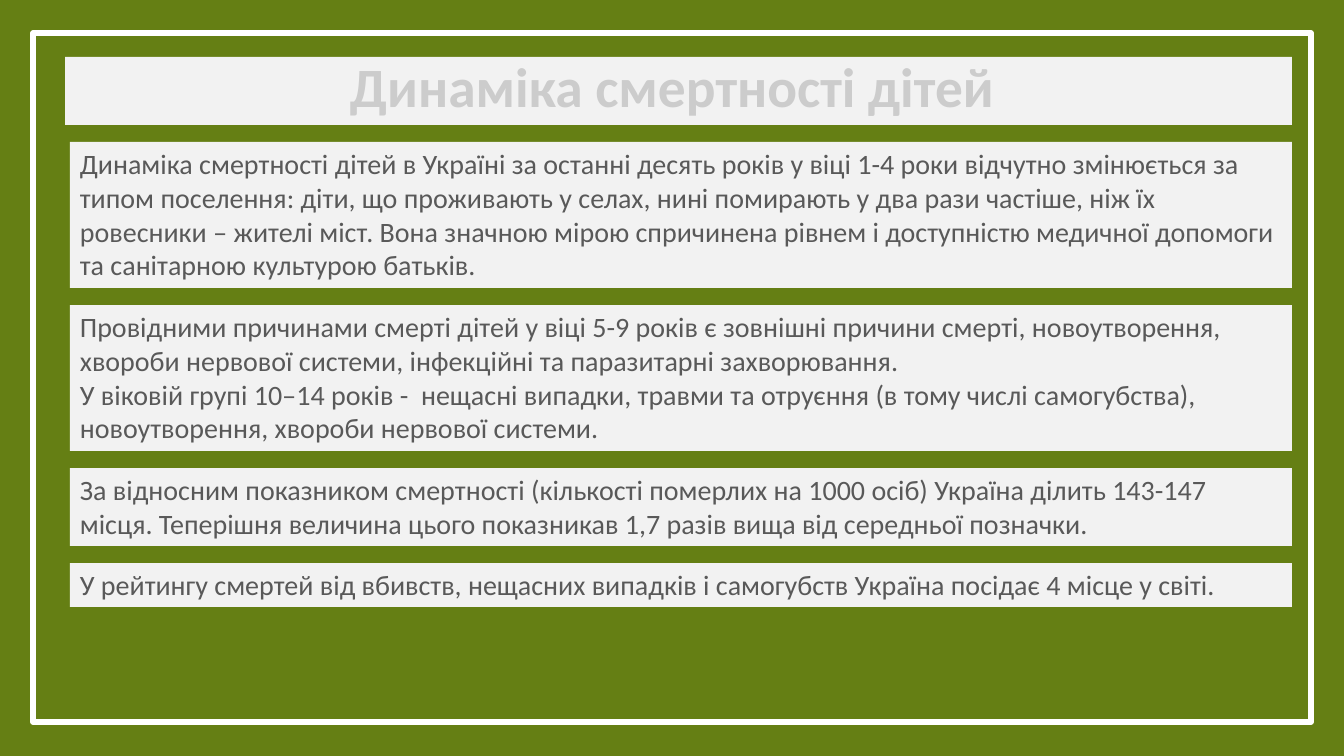
from pptx import Presentation
from pptx.dml.color import RGBColor
from pptx.enum.shapes import MSO_SHAPE
from pptx.enum.text import MSO_ANCHOR, MSO_AUTO_SIZE, PP_ALIGN
from pptx.util import Pt

EMU_PER_INCH, PX_PER_INCH = 914400, 100.8
COLORS = {
    "green": "657F14",
    "white": "FFFFFF",
    "panel": "F2F2F2",
    "title": "CCCCCC",
    "text": "595959",
}


def px(*lengths):
    return [round(length * EMU_PER_INCH / PX_PER_INCH) for length in lengths]


def add_span(para, text, size, color):
    span = para.add_run()
    span.text = text
    span.font.name = "Calibri"
    span.font.size = Pt(size)
    span.font.color.rgb = RGBColor.from_string(COLORS[color])
    return span


deck = Presentation()
deck.slide_width, deck.slide_height = px(1344, 756)
page = deck.slides.add_slide(deck.slide_layouts[5])

# Background and white frame
page.background.fill.solid()
page.background.fill.fore_color.rgb = RGBColor.from_string(COLORS["green"])
frame = page.shapes.add_shape(MSO_SHAPE.RECTANGLE, *px(33, 33, 1278, 689))
frame.shadow.inherit = False
frame.fill.background()
frame.line.color.rgb = RGBColor.from_string(COLORS["white"])
frame.line.width = Pt(4)

# Title
title = page.shapes.title
title.left, title.top, title.width, title.height = px(65, 57, 1227, 68)
title.fill.solid()
title.fill.fore_color.rgb = RGBColor.from_string(COLORS["panel"])
title.text_frame.auto_size = MSO_AUTO_SIZE.NONE
title.text_frame.vertical_anchor = MSO_ANCHOR.BOTTOM
para = title.text_frame.paragraphs[0]
para.alignment = PP_ALIGN.CENTER
para.line_spacing = 0.9
add_span(para, "Динаміка смертності дітей ", 39.6, "title").font.bold = True

# Text panels, stacked with an equal gap: height and paragraphs
panels = [
    (146, [
        "Динаміка смертності дітей в Україні за останні десять років у віці 1-4 роки "
        "відчутно змінюється за типом поселення: діти, що проживають у селах, нині "
        "помирають у два рази частіше, ніж їх ровесники ‒ жителі міст. Вона значною "
        "мірою спричинена рівнем і доступністю медичної допомоги та санітарною "
        "культурою батьків.",
    ]),
    (146, [
        "Провідними причинами смерті дітей у віці 5-9 років є зовнішні причини смерті, "
        "новоутворення, хвороби нервової системи, інфекційні та паразитарні "
        "захворювання.",
        "У віковій групі 10‒14 років -  нещасні випадки, травми та отруєння (в тому "
        "числі самогубства), новоутворення, хвороби нервової системи.",
    ]),
    (78, [
        "За відносним показником смертності (кількості померлих на 1000 осіб) Україна "
        "ділить 143-147 місця. Теперішня величина цього показникав 1,7 разів вища від "
        "середньої позначки.",
    ]),
    (44, [
        "У рейтингу смертей від вбивств, нещасних випадків і самогубств Україна "
        "посідає 4 місце у світі.",
    ]),
]
gap = 17
top = 142
for height, texts in panels:
    box = page.shapes.add_textbox(*px(70, top, 1222, height))
    box.fill.solid()
    box.fill.fore_color.rgb = RGBColor.from_string(COLORS["panel"])
    box.text_frame.word_wrap = True
    box.text_frame.auto_size = MSO_AUTO_SIZE.SHAPE_TO_FIT_TEXT
    for index, text in enumerate(texts):
        para = box.text_frame.add_paragraph() if index else box.text_frame.paragraphs[0]
        add_span(para, text, 20, "text")
    top += height + gap

deck.save("out.pptx")
